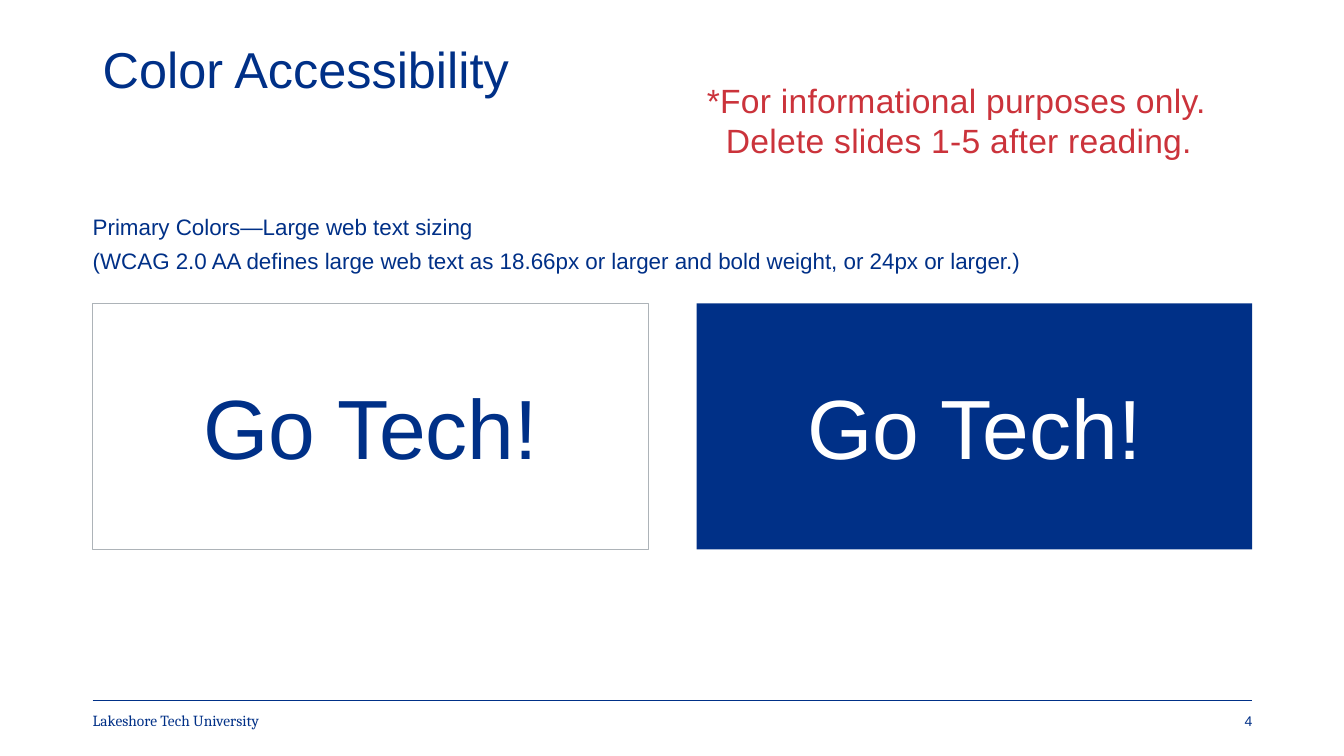
from pptx import Presentation
from pptx.dml.color import RGBColor
from pptx.enum.shapes import MSO_CONNECTOR, MSO_SHAPE
from pptx.enum.text import MSO_ANCHOR, PP_ALIGN
from pptx.oxml.ns import qn
from pptx.util import Inches, Pt

LEFT, CENTER, RIGHT = PP_ALIGN.LEFT, PP_ALIGN.CENTER, PP_ALIGN.RIGHT
TOP, MIDDLE = MSO_ANCHOR.TOP, MSO_ANCHOR.MIDDLE

BLUE, WHITE, GRAY, RED = "003087", "FFFFFF", "ADB3B8", "CB333B"

TITLE = "Color Accessibility"
NOTICE = "*For informational purposes only.\nDelete slides 1-5 after reading."
INTRO = (
    "Primary Colors—Large web text sizing\n"
    "(WCAG 2.0 AA defines large web text as 18.66px or larger and bold weight, "
    "or 24px or larger.)"
)
SAMPLE = "Go Tech!"
SWATCHES = [  # fill, text, outline
    (WHITE, BLUE, GRAY),
    (BLUE, WHITE, None),
]
FOOTER = "Lakeshore Tech University"
PAGE_NUMBER = "4"

SLIDE_WIDTH, SLIDE_HEIGHT = 13.33, 7.5
MARGIN = 0.92
CONTENT_WIDTH = 11.5
CONTENT_RIGHT = MARGIN + CONTENT_WIDTH
GAP = 0.48
SWATCH_WIDTH = (CONTENT_WIDTH - GAP) / len(SWATCHES)
SWATCH_TOP, SWATCH_HEIGHT = 3.01, 2.44
NOTICE_WIDTH = 5.41
NOTICE_INDENT = 0.19
FOOTER_TOP, FOOTER_WIDTH, FOOTER_HEIGHT = 6.95, 2.1, 0.4


def color(hex_code):
    return RGBColor.from_string(hex_code)


def write(shape, text, size, hex_code, font="Arial", align=LEFT, anchor=TOP,
          insets=(0, 0)):
    """Fill a shape with one paragraph; insets are left and right, in inches."""
    frame = shape.text_frame
    frame.word_wrap = True
    frame.vertical_anchor = anchor
    frame.margin_left, frame.margin_right = map(Inches, insets)
    para = frame.paragraphs[0]
    para.text = text
    para.alignment = align
    para.font.name = font
    para.font.size = Pt(size)
    para.font.color.rgb = color(hex_code)
    return para


def add_text(page, box, *content, **style):
    return write(page.shapes.add_textbox(*map(Inches, box)), *content, **style)


def add_swatch(page, column, fill, text_color, outline):
    left = MARGIN + column * (SWATCH_WIDTH + GAP)
    box = map(Inches, (left, SWATCH_TOP, SWATCH_WIDTH, SWATCH_HEIGHT))
    swatch = page.shapes.add_shape(MSO_SHAPE.RECTANGLE, *box)
    swatch.shadow.inherit = False
    swatch.fill.solid()
    swatch.fill.fore_color.rgb = color(fill)
    if outline:
        swatch.line.color.rgb = color(outline)
        swatch.line.width = Pt(1)
    else:
        swatch.line.fill.background()
    write(swatch, SAMPLE, 60, text_color, align=CENTER, anchor=MIDDLE,
          insets=(0.1, 0.1))


def add_footer(page):
    rule = page.shapes.add_connector(
        MSO_CONNECTOR.STRAIGHT,
        *map(Inches, (MARGIN, FOOTER_TOP, CONTENT_RIGHT, FOOTER_TOP)))
    rule.line.color.rgb = color(BLUE)
    rule.line.width = Pt(0.5)
    properties = rule._element.spPr
    properties.append(properties.makeelement(qn("a:effectLst"), {}))

    size = (FOOTER_WIDTH, FOOTER_HEIGHT)
    add_text(page, (MARGIN, FOOTER_TOP, *size), FOOTER, 11, BLUE,
             font="Cambria", anchor=MIDDLE)
    add_text(page, (CONTENT_RIGHT - FOOTER_WIDTH, FOOTER_TOP, *size),
             PAGE_NUMBER, 10, BLUE, align=RIGHT, anchor=MIDDLE)


def add_notice(page):
    """Add the red notice, its second line indented past the asterisk."""
    para = add_text(page, (CONTENT_RIGHT - NOTICE_WIDTH, 0.74, NOTICE_WIDTH, 0.91),
                    NOTICE, 24, RED, insets=(0, 0.1))
    indent = Inches(NOTICE_INDENT)
    properties = para._p.get_or_add_pPr()
    properties.set("marL", str(indent))
    properties.set("indent", str(-indent))
    for span in para.runs:
        span._r.get_or_add_rPr().set("spc", "20")


def main():
    deck = Presentation()
    deck.slide_width, deck.slide_height = Inches(SLIDE_WIDTH), Inches(SLIDE_HEIGHT)
    page = deck.slides.add_slide(deck.slide_layouts[6])

    add_footer(page)
    title = add_text(page, (MARGIN, 0.4, CONTENT_WIDTH, 1.45), TITLE, 36, BLUE,
                     insets=(0.1, 0.1))
    title.line_spacing = 0.9
    intro = add_text(page, (MARGIN, 2, CONTENT_WIDTH, 0.82), INTRO, 16, BLUE)
    intro.line_spacing = Pt(24)
    intro.space_after = Pt(12)
    for column, swatch in enumerate(SWATCHES):
        add_swatch(page, column, *swatch)
    add_notice(page)

    deck.save("out.pptx")


if __name__ == "__main__":
    main()
